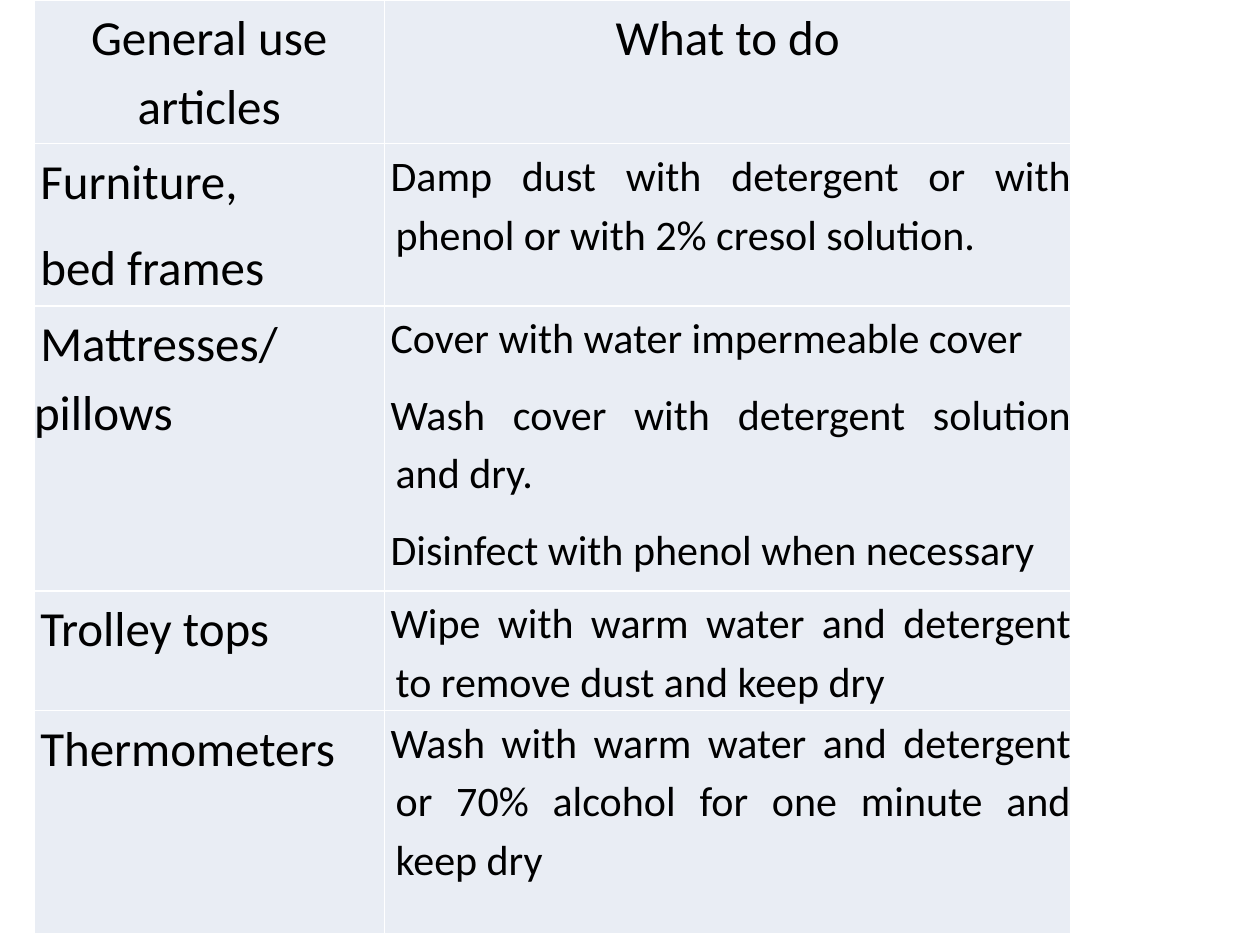
from dataclasses import dataclass

from lxml.etree import SubElement
from pptx import Presentation
from pptx.dml.color import RGBColor
from pptx.enum.text import PP_ALIGN
from pptx.oxml.ns import qn
from pptx.table import _Cell
from pptx.util import Inches, Pt

BLACK = RGBColor(0x00, 0x00, 0x00)
WHITE = RGBColor(0xFF, 0xFF, 0xFF)
PALE_BLUE = RGBColor(0xE9, 0xED, 0xF4)


@dataclass(frozen=True)
class TextStyle:
    size: int
    align: PP_ALIGN
    margin: float = 0
    indent: float = 0


@dataclass(frozen=True)
class ArticleRow:
    height: float
    article: list[str]
    care: list[str]


HEADER = TextStyle(28, PP_ALIGN.CENTER)
ARTICLE = TextStyle(28, PP_ALIGN.JUSTIFY, indent=0.05)
CARE = TextStyle(24, PP_ALIGN.JUSTIFY, margin=0.09, indent=-0.04)

COLUMN_WIDTHS = [2.78, 5.45]
ROWS = [
    ArticleRow(1.14, ["General use articles"], ["What to do"]),
    ArticleRow(1.29, ["Furniture,", "bed frames"],
               ["Damp dust with detergent or with phenol or with 2% cresol solution."]),
    ArticleRow(2.26, ["Mattresses/pillows"],
               ["Cover with water impermeable cover",
                "Wash cover with detergent solution and dry.",
                "Disinfect with phenol when necessary"]),
    ArticleRow(0.95, ["Trolley tops"],
               ["Wipe with warm water and detergent to remove dust and keep dry"]),
    ArticleRow(1.77, ["Thermometers"],
               ["Wash with warm water and detergent or 70% alcohol for one minute "
                "and keep dry"]),
]


def set_borders(cell: _Cell, color: RGBColor, width: float) -> None:
    """Draw all four edges; border elements must come before the fill."""
    properties = cell._tc.get_or_add_tcPr()
    for position, edge in enumerate(("lnL", "lnR", "lnT", "lnB")):
        line = SubElement(properties, qn(f"a:{edge}"), w=str(Pt(width)))
        solid = SubElement(line, qn("a:solidFill"))
        SubElement(solid, qn("a:srgbClr"), val=str(color))
        properties.insert(position, line)


def fill_cell(cell: _Cell, lines: list[str], style: TextStyle) -> None:
    cell.margin_left = cell.margin_right = 0
    cell.margin_top = cell.margin_bottom = 0
    cell.fill.solid()
    cell.fill.fore_color.rgb = PALE_BLUE
    set_borders(cell, WHITE, 1)

    cell.text = "\n".join(lines)
    for para in cell.text_frame.paragraphs:
        properties = para._p.get_or_add_pPr()
        properties.set("marL", str(Inches(style.margin)))
        properties.set("indent", str(Inches(style.indent)))
        para.alignment = style.align
        para.line_spacing = 1.15
        para.space_after = Pt(10)
        para.font.name = "Calibri"
        para.font.size = Pt(style.size)
        para.font.color.rgb = BLACK


def main() -> None:
    deck = Presentation()
    deck.slide_width, deck.slide_height = Inches(10), Inches(7.5)
    page = deck.slides.add_slide(deck.slide_layouts[6])

    # Table frame
    total_height = sum(row.height for row in ROWS)
    table = page.shapes.add_table(
        len(ROWS), len(COLUMN_WIDTHS), Inches(0.27), 0,
        Inches(sum(COLUMN_WIDTHS)), Inches(total_height)).table
    table.first_row = False
    table.horz_banding = False
    for column, width in zip(table.columns, COLUMN_WIDTHS):
        column.width = Inches(width)

    # Header row, then one row per article
    for index, row in enumerate(ROWS):
        table.rows[index].height = Inches(row.height)
        styles = (HEADER, HEADER) if index == 0 else (ARTICLE, CARE)
        for column, lines in enumerate((row.article, row.care)):
            fill_cell(table.cell(index, column), lines, styles[column])

    deck.save("out.pptx")


if __name__ == "__main__":
    main()
